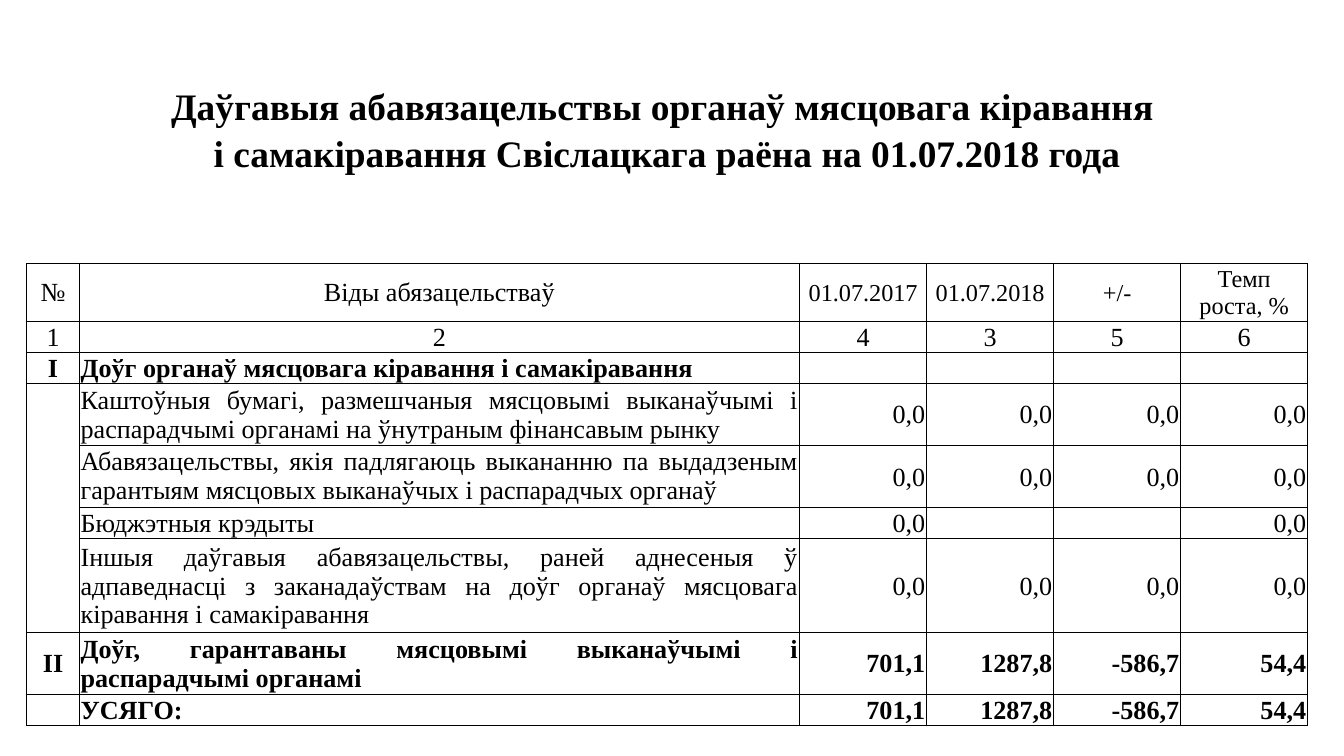
from lxml.etree import SubElement
from pptx import Presentation
from pptx.dml.color import RGBColor
from pptx.enum.text import MSO_ANCHOR, PP_ALIGN
from pptx.oxml.ns import qn
from pptx.util import Inches, Pt

BLACK = RGBColor(0, 0, 0)
WHITE = RGBColor(255, 255, 255)
MID, LOW, TOP = MSO_ANCHOR.MIDDLE, MSO_ANCHOR.BOTTOM, MSO_ANCHOR.TOP
LEFT, RIGHT = PP_ALIGN.LEFT, PP_ALIGN.RIGHT
CENTER, FULL = PP_ALIGN.CENTER, PP_ALIGN.JUSTIFY

COLS = [0.39, 5.36] + [3.78 / 4] * 4
STEP = 2.78 / 12
ROWS = [0.38, 0.72, 0.38, 0.27, 0.43] + [STEP * n for n in (1, 1, 2, 2, 1, 3, 2, 1)]
TITLE = [
    "Даўгавыя абавязацельствы органаў мясцовага кіравання ",
    "і самакіравання Свіслацкага раёна на 01.07.2018 года",
]
HEAD = ["№", "Віды абязацельстваў", "01.07.2017", "01.07.2018", "+/-", "Темп\nроста, %"]
ZEROS = ["0,0"] * 4
TOTALS = ["701,1", "1287,8", "-586,7", "54,4"]
BODY = [
    ["I", "Доўг органаў мясцовага кіравання і самакіравання"] + [""] * 4,
    ["", "Каштоўныя бумагі, размешчаныя мясцовымі выканаўчымі і "
         "распарадчымі органамі на ўнутраным фінансавым рынку"] + ZEROS,
    ["", "Абавязацельствы, якія падлягаюць выкананню па выдадзеным "
         "гарантыям мясцовых выканаўчых і распарадчых органаў"] + ZEROS,
    ["", "Бюджэтныя крэдыты", "0,0", "", "", "0,0"],
    ["", "Іншыя даўгавыя абавязацельствы, раней аднесеныя ў "
         "адпаведнасці з заканадаўствам на доўг органаў мясцовага "
         "кіравання і самакіравання"] + ZEROS,
    ["II", "Доўг, гарантаваны мясцовымі выканаўчымі і "
           "распарадчымі органамі"] + TOTALS,
    ["", "УСЯГО:"] + TOTALS,
]


class Deck:
    font = "Times New Roman"
    size = 14
    line = 0.5

    def __init__(self):
        self.prs = Presentation()
        self.prs.slide_width = Inches(10)
        self.prs.slide_height = Inches(10 * 9 / 16)
        self.slide = self.prs.slides.add_slide(self.prs.slide_layouts[6])

    def table(self, left, top, cols, rows):
        frame = self.slide.shapes.add_table(
            len(rows), len(cols), Inches(left), Inches(top),
            Inches(sum(cols)), Inches(sum(rows)))
        grid = frame.table
        grid.first_row = grid.horz_banding = False
        for col, width in zip(grid.columns, cols):
            col.width = Inches(width)
        for row, height in zip(grid.rows, rows):
            row.height = Inches(height)
        return grid

    def edges(self, cell, sides):
        props = cell._tc.get_or_add_tcPr()
        for side in "LRTB":
            edge = SubElement(props, qn(f"a:ln{side}"), w=str(Pt(self.line)))
            if side in sides:
                fill = SubElement(edge, qn("a:solidFill"))
                SubElement(fill, qn("a:srgbClr"), val=str(BLACK))
            else:
                SubElement(edge, qn("a:noFill"))

    def cell(self, cell, lines=(), sides="LRTB", align=CENTER, anchor=MID,
             size=size, bold=False, space=None, fill=False):
        self.edges(cell, sides)
        if fill:
            cell.fill.solid()
            cell.fill.fore_color.rgb = WHITE
        else:
            cell.fill.background()
        cell.vertical_anchor = anchor
        cell.margin_left = cell.margin_right = cell.margin_top = Inches(0.01)
        cell.margin_bottom = 0
        frame = cell.text_frame
        if not lines:
            frame.paragraphs[0]._p.get_or_add_endParaRPr().set("sz", "1200")
        for i, text in enumerate(lines):
            para = frame.add_paragraph() if i else frame.paragraphs[0]
            para.alignment = align
            if space:
                para.line_spacing = space
            run = para.add_run()
            run.text = text
            run.font.name = self.font
            run.font.size = Pt(size)
            run.font.bold = bold
            run.font.color.rgb = BLACK


def main():
    deck = Deck()
    grid = deck.table(0.2, 0.21, COLS, ROWS)
    last = len(COLS) - 1

    for r in range(4):
        for c in range(len(COLS)):
            lines = TITLE if (r, c) == (1, 0) else ()
            deck.cell(grid.cell(r, c), lines, "B" if r == 3 else "",
                      anchor=LOW, size=20, bold=True, space=1.15, fill=r == 2)
        grid.cell(r, 0).merge(grid.cell(r, last))

    for c, text in enumerate(HEAD):
        deck.cell(grid.cell(4, c), text.split("\n"), size=13 if c > 1 else 14)
    for c, text in enumerate("124356"):
        deck.cell(grid.cell(5, c), [text], anchor=LOW)

    for r, row in enumerate(BODY, 6):
        for c, text in enumerate(row):
            sides = "LRTB"
            if c == 0 and 7 <= r <= 10:
                sides = {7: "LRT", 10: "LRB"}.get(r, "LR")
            align = [CENTER, LEFT if r == 12 else FULL][c] if c < 2 else RIGHT
            deck.cell(grid.cell(r, c), [text] if text else (), sides, align,
                      TOP if (r, c) == (8, 1) else MID,
                      bold=r in (6, 11, 12), fill=c > 1)

    deck.prs.save("out.pptx")


if __name__ == "__main__":
    main()
